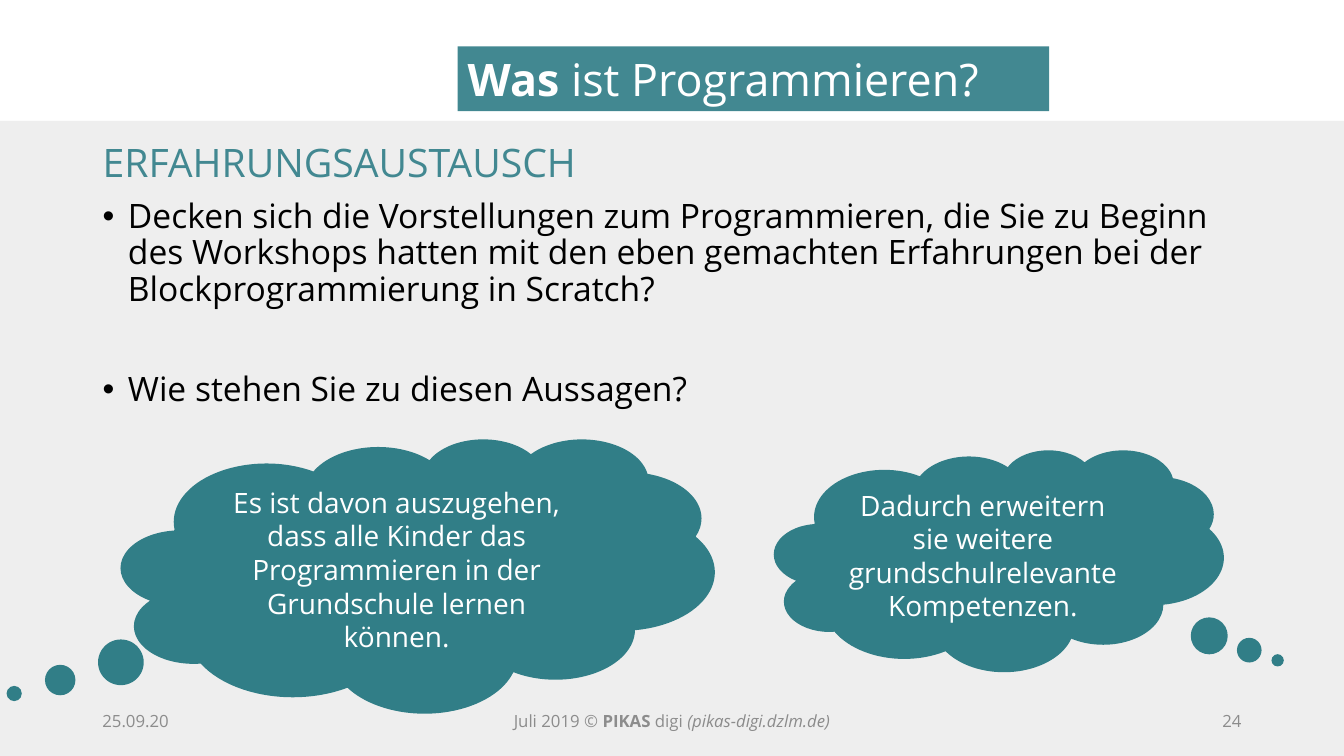
"""Build the slide on the exchange of programming experiences."""
from dataclasses import dataclass

from lxml import etree
from pptx import Presentation
from pptx.dml.color import RGBColor
from pptx.enum.shapes import MSO_SHAPE
from pptx.enum.text import MSO_ANCHOR, MSO_AUTO_SIZE, PP_ALIGN
from pptx.oxml.ns import qn
from pptx.util import Cm, Pt

LEFT, MID, RIGHT = PP_ALIGN.LEFT, PP_ALIGN.CENTER, PP_ALIGN.RIGHT
TOP, CENTRE = MSO_ANCHOR.TOP, MSO_ANCHOR.MIDDLE
RECT, CLOUD = MSO_SHAPE.RECTANGLE, MSO_SHAPE.CLOUD_CALLOUT
FIXED = MSO_AUTO_SIZE.NONE


@dataclass(frozen=True)
class Theme:
    font: str = "Open Sans"
    teal: str = "428891"
    deep: str = "317E87"
    pale: str = "EEEEEE"
    grey: str = "8C8C8C"
    black: str = "000000"
    white: str = "FFFFFF"
    title: int = 32
    head: int = 28
    body: int = 24
    cloud: int = 20
    foot: int = 12


class Board:
    def __init__(self, deck, theme):
        self.theme = theme
        self.slide = deck.slides.add_slide(deck.slide_layouts[1])
        self.shapes = self.slide.shapes

    def place(self, shape, box):
        for name, value in zip(("left", "top", "width", "height"), box):
            setattr(shape, name, Cm(value))

    def paint(self, shape, color):
        shape.fill.solid()
        shape.fill.fore_color.rgb = RGBColor.from_string(color)
        shape.line.fill.background()

    def frame(self, shape, anchor):
        frame = shape.text_frame
        form = {"word_wrap": True, "auto_size": FIXED, "vertical_anchor": anchor}
        for name, value in form.items():
            setattr(frame, name, value)
        return frame

    def label(self, para, parts, size, color, align=LEFT):
        para.alignment = align
        for text, *marks in parts:
            run = para.add_run()
            run.text = text
            form = {"name": self.theme.font, "size": Pt(size),
                    "bold": "bold" in marks, "italic": "italic" in marks}
            for name, value in form.items():
                setattr(run.font, name, value)
            run.font.color.rgb = RGBColor.from_string(color)

    def shape(self, kind, box, color):
        shape = self.shapes.add_shape(kind, *map(Cm, box))
        shape.shadow.inherit = False
        self.paint(shape, color)
        return shape

    def band(self, box):
        band = self.shape(RECT, box, self.theme.pale)
        self.shapes._spTree.insert(2, band._element)

    def title(self, box, parts):
        title = self.shapes.title
        self.place(title, box)
        self.paint(title, self.theme.teal)
        para = self.frame(title, TOP).paragraphs[0]
        self.label(para, parts, self.theme.title, self.theme.white)

    def body(self, box, head, items):
        theme = self.theme
        body = self.slide.placeholders[1]
        self.place(body, box)
        frame = self.frame(body, TOP)
        rows = [(head, 0, theme.head, theme.teal)]
        rows += [(text, gap, theme.body, theme.black) for text, gap in items]
        for i, (text, gap, size, color) in enumerate(rows):
            para = frame.add_paragraph() if i else frame.paragraphs[0]
            para.line_spacing = 0.9
            para.space_before = Pt(gap)
            self.bullet(para, Cm(0.64) if i else 0)
            self.label(para, [(text,)], size, color)

    def bullet(self, para, indent):
        props = para._p.get_or_add_pPr()
        props.set("marL", str(indent))
        props.set("indent", str(-indent))
        if indent:
            etree.SubElement(props, qn("a:buChar")).set("char", "•")
        else:
            etree.SubElement(props, qn("a:buNone"))

    def cloud(self, box, tail, text):
        cloud = self.shape(CLOUD, box, self.theme.deep)
        for i, value in enumerate(tail):
            cloud.adjustments[i] = value
        para = self.frame(cloud, CENTRE).paragraphs[0]
        self.label(para, [(text,)], self.theme.cloud, self.theme.white, MID)

    def foot(self, left, width, parts, align):
        box = self.shapes.add_textbox(*map(Cm, (left, 17.66, width, 1.02)))
        para = self.frame(box, CENTRE).paragraphs[0]
        self.label(para, parts, self.theme.foot, self.theme.grey, align)


def main():
    deck = Presentation()
    deck.slide_width, deck.slide_height = Cm(33.87), Cm(19.05)
    board = Board(deck, Theme())
    board.band((0, 3.05, 33.87, 16))
    board.title((11.53, 1.17, 14.91, 1.63),
                [("Was", "bold"), (" ist Programmieren?",)])
    board.body((2.33, 3.48, 29.21, 12.09), "ERFAHRUNGSAUSTAUSCH", [
        ("Decken sich die Vorstellungen zum Programmieren, die Sie zu Beginn "
         "des Workshops hatten mit den eben gemachten Erfahrungen bei der "
         "Blockprogrammierung in Scratch?", 10),
        ("Wie stehen Sie zu diesen Aussagen?", 46)])
    board.foot(2.33, 7.62, [("25.09.20",)], LEFT)
    board.foot(11.22, 11.43, [("Juli 2019 © ",), ("PIKAS", "bold"), (" digi ",),
                              ("(pikas-digi.dzlm.de)", "italic")], MID)
    board.foot(23.92, 7.62, [("24",)], RIGHT)
    board.cloud((3.05, 11.05, 14.96, 6.91), (-0.68, 0.43),
                "Es ist davon auszugehen, dass alle Kinder das Programmieren "
                "in der Grundschule lernen können.")
    board.cloud((19.51, 11.33, 11.33, 5.59), (0.62, 0.45),
                "Dadurch erweitern sie weitere grundschulrelevante Kompetenzen.")
    deck.save("out.pptx")


if __name__ == "__main__":
    main()
